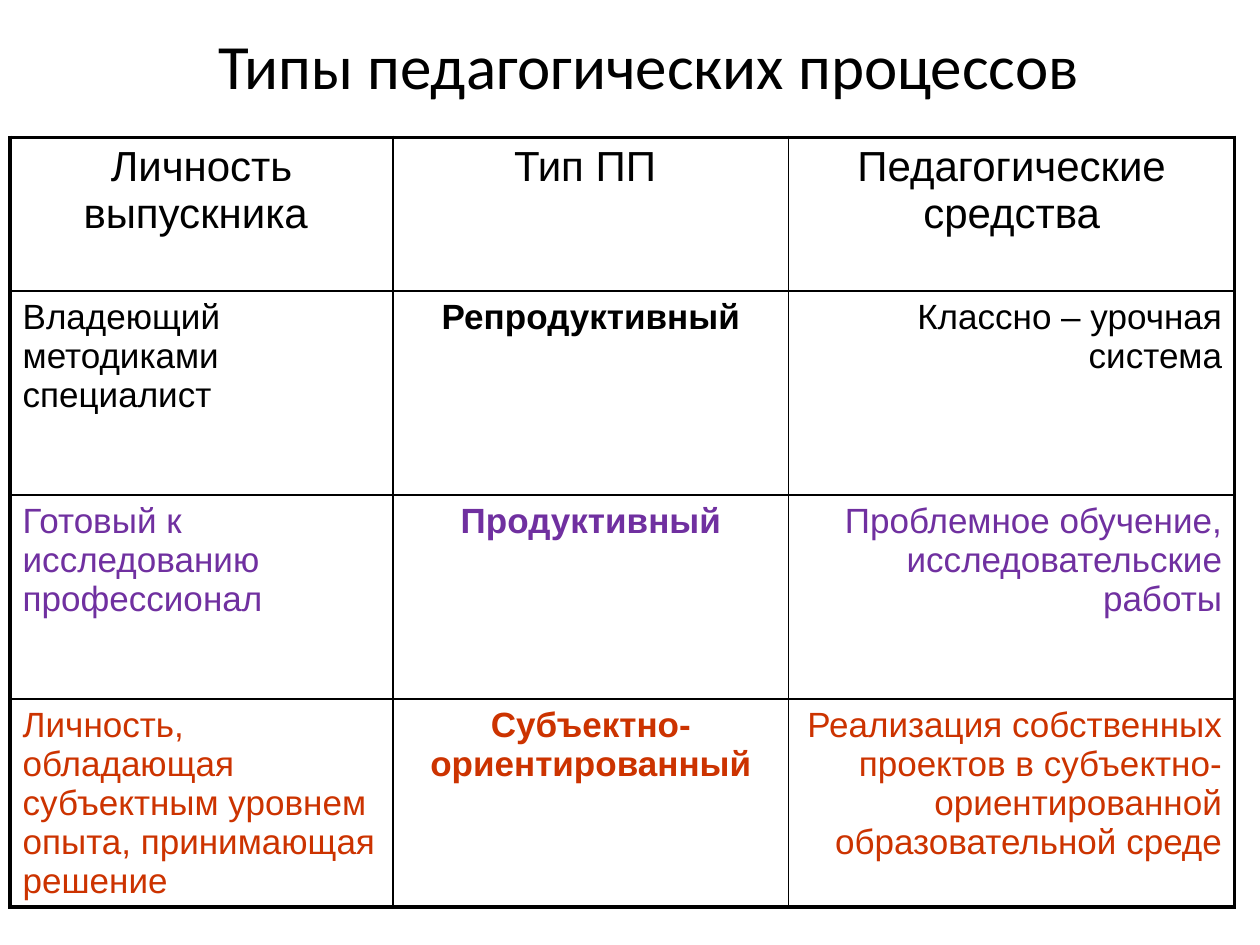
from lxml import etree
from pptx import Presentation, util as u
from pptx.dml.color import RGBColor
from pptx.enum import text as t
from pptx.oxml.ns import qn

BLACK = RGBColor(0x00, 0x00, 0x00)
WHITE = RGBColor(0xFF, 0xFF, 0xFF)
VIOLET = RGBColor(0x70, 0x30, 0xA0)
RUST = RGBColor(0xCC, 0x33, 0x00)

# Content
TITLE = "Типы педагогических процессов"
HEAD = ("Личность выпускника ", "Тип ПП ", "Педагогические средства")
BODY = [
    (BLACK, ("Владеющий методиками специалист",
             "Репродуктивный",
             "Классно – урочная система")),
    (VIOLET, ("Готовый к исследованию профессионал",
              "Продуктивный",
              "Проблемное обучение, исследовательские работы")),
    (RUST, ("Личность, обладающая субъектным уровнем опыта, принимающая решение",
            "Субъектно- ориентированный",
            "Реализация собственных проектов в субъектно-ориентированной "
            "образовательной среде")),
]
COLS = (3.04, 3.14, 3.54)
ROWS = (1.22, 1.62, 1.62, 1.62)
LEFT, TOP = 0.08, 1.09
THIN, THICK = 1, 2.25
SIDES = (t.PP_ALIGN.LEFT, t.PP_ALIGN.CENTER, t.PP_ALIGN.RIGHT)


def write(frame, words, font, size, color, align, bold=False):
    para = frame.paragraphs[0]
    para.alignment = align
    run = para.add_run()
    run.text = words
    run.font.name, run.font.size = font, u.Pt(size)
    run.font.bold, run.font.color.rgb = bold, color
    return para


def space(para, share):
    """Space before the paragraph, as a share of the line."""
    gap = etree.Element(qn("a:spcBef"))
    etree.SubElement(gap, qn("a:spcPct"), val=str(int(share * 100000)))
    para._p.get_or_add_pPr().insert(0, gap)


def border(cell, widths):
    """Solid black edges; widths are given as left, right, top, bottom."""
    props = cell._tc.get_or_add_tcPr()
    for spot, (edge, width) in enumerate(zip("LRTB", widths)):
        line = etree.Element(qn("a:ln" + edge), w=str(u.Pt(width)))
        fill = etree.SubElement(line, qn("a:solidFill"))
        etree.SubElement(fill, qn("a:srgbClr"), val=str(BLACK))
        props.insert(spot, line)


deck = Presentation()
deck.slide_width, deck.slide_height = u.Inches(10), u.Inches(7.5)
slide = deck.slides.add_slide(deck.slide_layouts[5])
slide.background.fill.solid()
slide.background.fill.fore_color.rgb = WHITE

# Title
title = slide.shapes.title
title.left, title.top = u.Inches(0.9), u.Inches(0)
title.width, title.height = u.Inches(8.5), u.Inches(1.02)
title.text_frame.vertical_anchor = t.MSO_ANCHOR.MIDDLE
write(title.text_frame, TITLE, "Calibri", 36, BLACK, t.PP_ALIGN.CENTER)

# Table grid
table = slide.shapes.add_table(
    len(ROWS), len(COLS), u.Inches(LEFT), u.Inches(TOP),
    u.Inches(sum(COLS)), u.Inches(sum(ROWS))).table
table.first_row = table.horz_banding = False
for col, width in zip(table.columns, COLS):
    col.width = u.Inches(width)
for row, height in zip(table.rows, ROWS):
    row.height = u.Inches(height)

# Cells: thick outer frame, thin inner lines
for r, (color, words) in enumerate([(BLACK, HEAD)] + BODY):
    for c, word in enumerate(words):
        cell = table.cell(r, c)
        cell.fill.background()
        outer = (c == 0, c == len(COLS) - 1, r == 0, r == len(ROWS) - 1)
        border(cell, [THICK if out else THIN for out in outer])
        head = r == 0
        para = write(cell.text_frame, word, "Arial", 24 if head else 20, color,
                     t.PP_ALIGN.CENTER if head else SIDES[c],
                     bold=not head and c == 1)
        space(para, 0.2)

deck.save("out.pptx")
